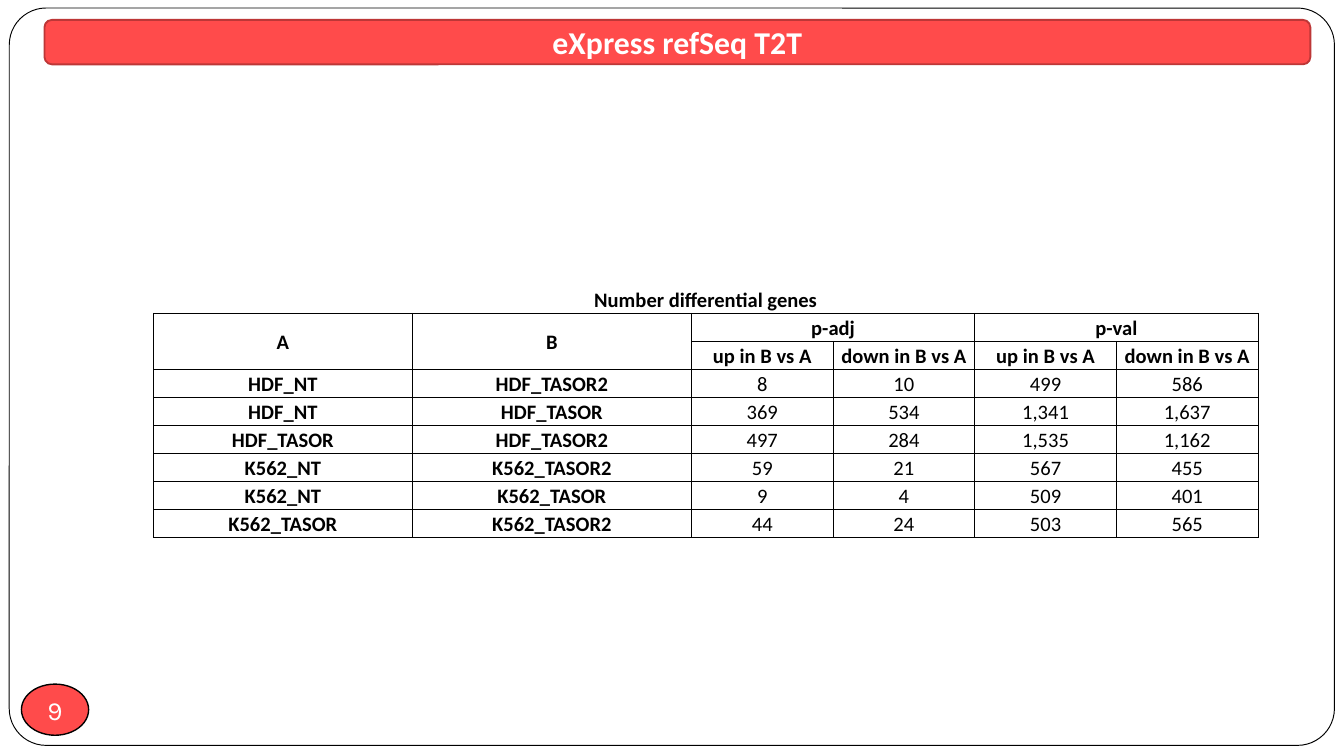
from dataclasses import dataclass

from lxml.etree import SubElement
from pptx import Presentation
from pptx.dml.color import RGBColor
from pptx.enum.shapes import MSO_SHAPE
from pptx.enum.text import MSO_ANCHOR, PP_ALIGN
from pptx.oxml.ns import qn
from pptx.util import Pt


@dataclass(frozen=True)
class Theme:
    """Colours, fonts and type sizes of the slide."""
    paper: str = "FFFFFF"
    ink: str = "000000"
    accent: str = "FF4B4B"
    accent_edge: str = "BD3737"
    text_font: str = "Calibri"
    number_font: str = "Karla"
    title_size: float = 17
    number_size: float = 14
    table_size: float = 11


THEME = Theme()
COLUMN_WIDTHS = [138.75, 149.5] + [75.9] * 4
ROW_HEIGHT = 15
HEADER_ROWS = 3
DIRECTIONS = ["up in B vs A", "down in B vs A"]
ROWS = [
    ["Number differential genes"] + [""] * 5,
    ["A", "B", "p-adj", "", "p-val", ""],
    ["", ""] + DIRECTIONS * 2,
    ["HDF_NT", "HDF_TASOR2", "8", "10", "499", "586"],
    ["HDF_NT", "HDF_TASOR", "369", "534", "1,341", "1,637"],
    ["HDF_TASOR", "HDF_TASOR2", "497", "284", "1,535", "1,162"],
    ["K562_NT", "K562_TASOR2", "59", "21", "567", "455"],
    ["K562_NT", "K562_TASOR", "9", "4", "509", "401"],
    ["K562_TASOR", "K562_TASOR2", "44", "24", "503", "565"],
]
MERGES = [((0, 0), (0, 5)), ((1, 0), (2, 0)), ((1, 1), (2, 1)),
          ((1, 2), (1, 3)), ((1, 4), (1, 5))]


def apply_format(target, values):
    """Set every named attribute of the target."""
    for name, value in values.items():
        setattr(target, name, value)


def write_text(frame, text, color, **font_values):
    """Write one centred run into a text frame."""
    paragraph = frame.paragraphs[0]
    paragraph.alignment = PP_ALIGN.CENTER
    run = paragraph.add_run()
    run.text = text
    apply_format(run.font, font_values)
    run.font.color.rgb = RGBColor.from_string(color)


def add_panel(slide, kind, box, fill, line, line_width):
    """Add a filled and outlined preset shape."""
    shape = slide.shapes.add_shape(kind, *map(Pt, box))
    shape.shadow.inherit = False
    shape.fill.solid()
    shape.fill.fore_color.rgb = RGBColor.from_string(fill)
    shape.line.color.rgb = RGBColor.from_string(line)
    shape.line.width = Pt(line_width)
    shape.text_frame.vertical_anchor = MSO_ANCHOR.MIDDLE
    return shape


def set_borders(cell, visible_sides):
    """Draw thin lines on the visible sides and none on the others."""
    properties = cell._tc.get_or_add_tcPr()
    for side in "LRTB":
        line = SubElement(properties, qn(f"a:ln{side}"), w=str(Pt(0.5)))
        if side in visible_sides:
            fill = SubElement(line, qn("a:solidFill"))
            SubElement(fill, qn("a:srgbClr"), val=THEME.ink)
        else:
            SubElement(line, qn("a:noFill"))


def format_cell(cell, row, column, text):
    """Fill in one table cell according to its place in the grid."""
    is_spanning_label = row == 1 and column < 2
    apply_format(cell, {
        "margin_left": Pt(0.7), "margin_right": Pt(0.7),
        "margin_top": Pt(0.7), "margin_bottom": Pt(0),
        "vertical_anchor": MSO_ANCHOR.MIDDLE if is_spanning_label else MSO_ANCHOR.BOTTOM,
    })
    set_borders(cell, "LRTB" if row else "B")
    cell.fill.background()
    if text:
        write_text(cell.text_frame, text, THEME.ink, name=THEME.text_font,
                   size=Pt(THEME.table_size), bold=row < HEADER_ROWS or column < 2)


def add_gene_table(slide, left, top):
    """Add the table of differential gene counts."""
    table = slide.shapes.add_table(
        len(ROWS), len(COLUMN_WIDTHS), Pt(left), Pt(top),
        Pt(sum(COLUMN_WIDTHS)), Pt(ROW_HEIGHT * len(ROWS))).table
    apply_format(table, {"first_row": False, "horz_banding": False})
    for column, width in zip(table.columns, COLUMN_WIDTHS):
        column.width = Pt(width)
    for row_index, texts in enumerate(ROWS):
        table.rows[row_index].height = Pt(ROW_HEIGHT)
        for column_index, text in enumerate(texts):
            format_cell(table.cell(row_index, column_index), row_index, column_index, text)
    for first, last in MERGES:
        table.cell(*first).merge(table.cell(*last))


def add_page_number(slide, text):
    """Add the oval page number badge."""
    badge = add_panel(slide, MSO_SHAPE.OVAL, (11.5, 366.5, 36, 27.4),
                      THEME.accent, THEME.ink, 0.75)
    apply_format(badge.text_frame, {
        "margin_left": 0, "margin_right": 0, "margin_top": 0,
        "margin_bottom": 0, "word_wrap": False,
    })
    write_text(badge.text_frame, text, THEME.paper,
               name=THEME.number_font, size=Pt(THEME.number_size))


def add_title(slide, text):
    """Add the title bar."""
    bar = add_panel(slide, MSO_SHAPE.ROUNDED_RECTANGLE, (23.8, 10.7, 678.2, 23.8),
                    THEME.accent, THEME.accent_edge, 1)
    write_text(bar.text_frame, text, THEME.paper, name=THEME.text_font,
               size=Pt(THEME.title_size), bold=True)


def main():
    """Build and save the slide."""
    presentation = Presentation()
    apply_format(presentation, {"slide_width": Pt(720), "slide_height": Pt(405)})
    slide = presentation.slides.add_slide(presentation.slide_layouts[6])
    frame = add_panel(slide, MSO_SHAPE.ROUNDED_RECTANGLE, (5, 4.3, 709.9, 395),
                      THEME.paper, THEME.ink, 0.5)
    frame.adjustments[0] = 0.05
    add_page_number(slide, "9")
    add_title(slide, "eXpress refSeq T2T")
    add_gene_table(slide, 82.2, 152.9)
    presentation.save("out.pptx")


if __name__ == "__main__":
    main()
